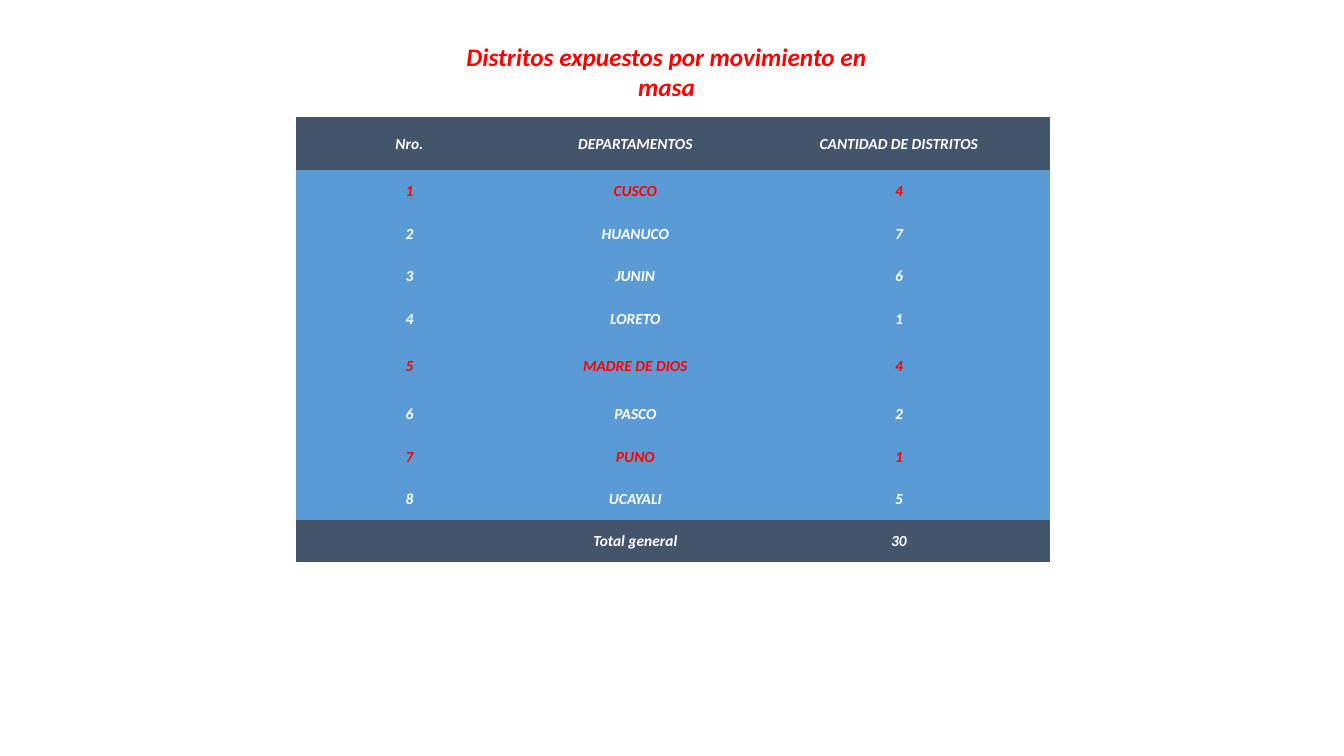
import pptx
import pptx.util
import pptx.dml.color
import pptx.enum.text

RED = pptx.dml.color.RGBColor(0xFF, 0x00, 0x00)
WHITE = pptx.dml.color.RGBColor(0xFF, 0xFF, 0xFF)
SLATE = pptx.dml.color.RGBColor(0x44, 0x54, 0x6A)
BLUE = pptx.dml.color.RGBColor(0x5B, 0x9B, 0xD5)

FONT = "Calibri"
PLAIN = "{2D5ABB26-0587-4C30-8999-92F81FD0307C}"
TITLE = "Distritos expuestos por movimiento en masa"
ROWS = [
    ("Nro.", "DEPARTAMENTOS", "CANTIDAD DE DISTRITOS"),
    ("1", "CUSCO", "4"),
    ("2", "HUANUCO", "7"),
    ("3", "JUNIN", "6"),
    ("4", "LORETO", "1"),
    ("5", "MADRE DE DIOS", "4"),
    ("6", "PASCO", "2"),
    ("7", "PUNO", "1"),
    ("8", "UCAYALI", "5"),
    ("", "Total general", "30"),
]
MARKED = {"CUSCO", "MADRE DE DIOS", "PUNO"}
COLS = (3, 3, 4)
TALL = {0, 5}


def inches(*sizes):
    return [pptx.util.Inches(size) for size in sizes]


def write(frame, text, size, color):
    para = frame.paragraphs[0]
    para.alignment = pptx.enum.text.PP_ALIGN.CENTER
    if not text:
        return
    run = para.add_run()
    run.text = text
    font = run.font
    font.name = FONT
    font.size = pptx.util.Pt(size)
    font.bold = font.italic = True
    font.color.rgb = color


def add_title(slide, box):
    title = slide.shapes.title
    title.left, title.top, title.width, title.height = inches(*box)
    frame = title.text_frame
    frame.word_wrap = False
    frame.auto_size = pptx.enum.text.MSO_AUTO_SIZE.NONE
    frame.vertical_anchor = pptx.enum.text.MSO_ANCHOR.MIDDLE
    write(frame, TITLE, 18, RED)


def fill_cell(cell, text, back, color):
    cell.fill.solid()
    cell.fill.fore_color.rgb = back
    cell.vertical_anchor = pptx.enum.text.MSO_ANCHOR.MIDDLE
    cell.margin_left = cell.margin_right = cell.margin_top = pptx.util.Inches(0.01)
    cell.margin_bottom = 0
    write(cell.text_frame, text, 11, color)


def add_grid(slide, box):
    table = slide.shapes.add_table(len(ROWS), len(COLS), *inches(*box)).table
    table._tbl.tblPr[0].text = PLAIN
    for col, share in zip(table.columns, COLS):
        col.width = pptx.util.Inches(box[2] * share / sum(COLS))
    shares = [5 if num in TALL else 4 for num in range(len(ROWS))]
    for num, (row, share) in enumerate(zip(table.rows, shares)):
        row.height = pptx.util.Inches(box[3] * share / sum(shares))
        back = SLATE if num in (0, len(ROWS) - 1) else BLUE
        color = RED if ROWS[num][1] in MARKED else WHITE
        for cell, text in zip(row.cells, ROWS[num]):
            fill_cell(cell, text, back, color)


def main():
    deck = pptx.Presentation()
    deck.slide_width, deck.slide_height = inches(13.33, 7.5)
    slide = deck.slides.add_slide(deck.slide_layouts[5])
    add_title(slide, (4.22, 0.51, 4.78, 0.4))
    add_grid(slide, (2.94, 1.16, 7.47, 4.42))
    deck.save("out.pptx")


if __name__ == "__main__":
    main()
